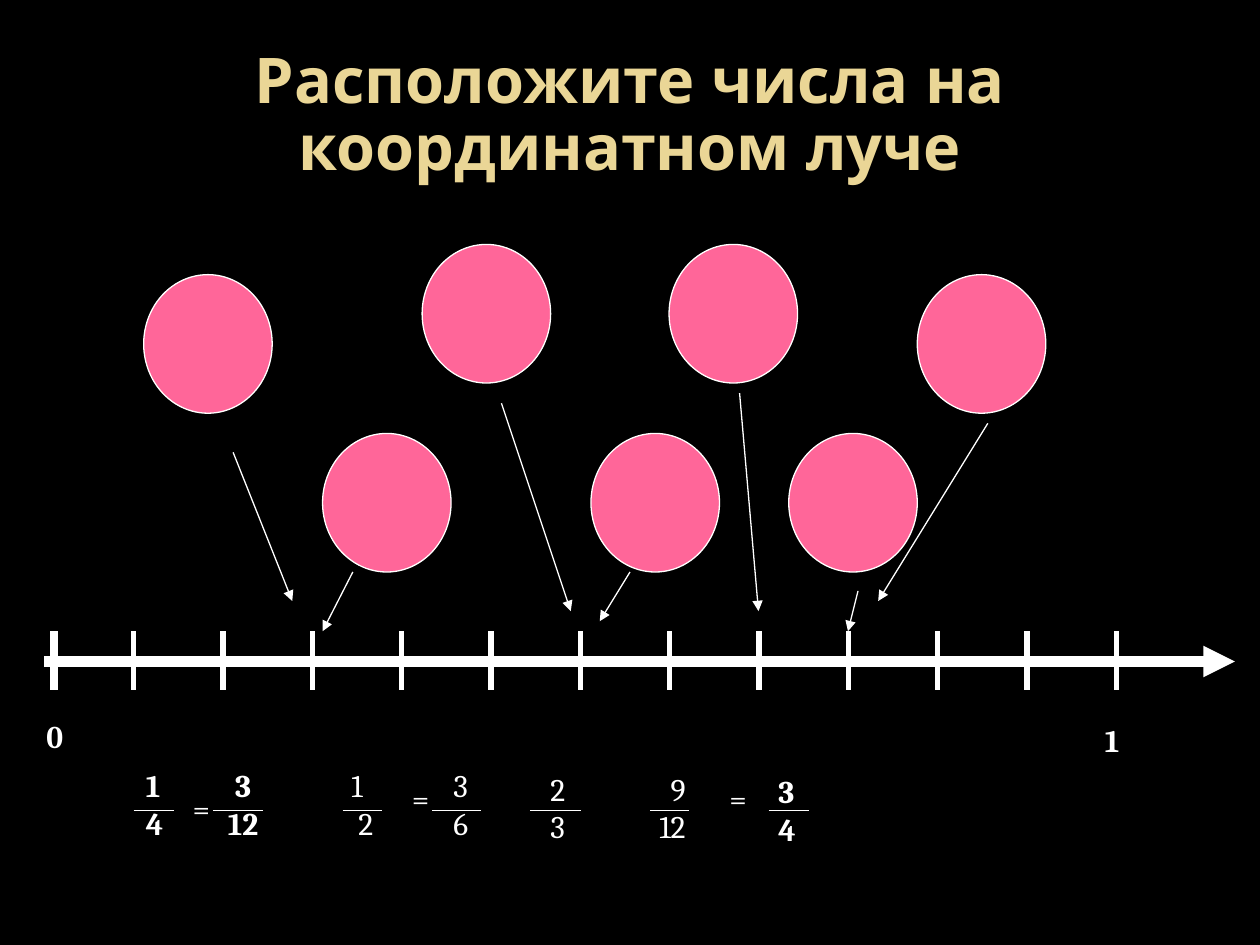
from lxml import etree
from pptx import Presentation
from pptx.dml.color import RGBColor
from pptx.enum.shapes import MSO_CONNECTOR, MSO_SHAPE
from pptx.enum.text import MSO_ANCHOR, MSO_AUTO_SIZE, PP_ALIGN
from pptx.oxml.ns import qn
from pptx.util import Inches, Pt

STRAIGHT = MSO_CONNECTOR.STRAIGHT
OVAL = MSO_SHAPE.OVAL
LEFT, CENTER, RIGHT = PP_ALIGN.LEFT, PP_ALIGN.CENTER, PP_ALIGN.RIGHT

COLORS = {"bg": "000000", "title": "EAD696", "white": "FFFFFF", "pink": "FF6699"}

AXIS_Y = 5.25
TICK_TOP, TICK_BOTTOM = 5.01, 5.48
BAR_Y = 6.43

# Left and top of each circle
CIRCLES = [(1.14, 2.18), (3.35, 1.94), (4.69, 3.44), (2.56, 3.44),
           (7.28, 2.18), (5.31, 1.94), (6.26, 3.44)]

# Start and end of each pointer from a circle to the ray
POINTERS = [(1.85, 3.59, 2.32, 4.77), (2.8, 4.54, 2.56, 5.01),
            (3.98, 3.2, 4.53, 4.85), (5, 4.54, 4.76, 4.93),
            (6.81, 4.69, 6.73, 5.01), (5.87, 3.12, 6.02, 4.85),
            (7.84, 3.36, 6.97, 4.77)]

# Numerator, denominator, left, top, width, bar start, bar end, bold, alignments
FRACTIONS = [
    ("1", "4", 1.06, 6.03, 0.34, 1.06, 1.38, True, (LEFT, LEFT)),
    ("3", "12", 1.69, 6.03, 0.48, 1.69, 2.09, True, (CENTER, CENTER)),
    ("1", "2", 2.69, 6.03, 0.37, 2.72, 3.03, False, (LEFT, RIGHT)),
    ("3", "6", 3.5, 6.03, 0.34, 3.43, 3.82, False, (LEFT, LEFT)),
    ("2", "3", 4.27, 6.06, 0.34, 4.21, 4.61, False, (LEFT, LEFT)),
    ("9", "12", 5.06, 6.06, 0.43 + 0.05, 5.16, 5.47, False, (RIGHT, RIGHT)),
    ("3", "4", 6.08, 6.08, 0.34, 6.1, 6.42, True, (LEFT, LEFT)),
]

EQUALS = [(1.43, 6.21), (3.17, 6.13), (5.69, 6.13)]


def rgb(name):
    return RGBColor.from_string(COLORS[name])


def set_font(r, color, **values):
    for name, value in values.items():
        setattr(r.font, name, value)
    r.font.color.rgb = rgb(color)


def add_title(s, text):
    sp = s.shapes.title
    box = {"left": 0.5, "top": 0.3, "width": 9, "height": 1.25}
    for name, value in box.items():
        setattr(sp, name, Inches(value))
    tf = sp.text_frame
    tf.auto_size = MSO_AUTO_SIZE.NONE
    tf.vertical_anchor = MSO_ANCHOR.MIDDLE
    p = tf.paragraphs[0]
    p.alignment = CENTER
    p.line_spacing = 0.89
    r = p.add_run()
    r.text = text
    set_font(r, "title", name="Open Sans", size=Pt(36), bold=True)


def add_line(s, x1, y1, x2, y2, width=0.75, arrow=False):
    sp = s.shapes.add_connector(STRAIGHT, *map(Inches, (x1, y1, x2, y2)))
    sp.line.color.rgb = rgb("white")
    sp.line.width = Pt(width)
    if arrow:
        etree.SubElement(sp.line._get_or_add_ln(), qn("a:tailEnd"), type="triangle")
    etree.SubElement(sp._element.spPr, qn("a:effectLst"))


def add_circle(s, left, top):
    sp = s.shapes.add_shape(OVAL, *map(Inches, (left, top, 1.02, 1.1)))
    sp.shadow.inherit = False
    sp.fill.solid()
    sp.fill.fore_color.rgb = rgb("pink")
    sp.line.color.rgb = rgb("white")
    sp.line.width = Pt(0.75)


def add_text(s, lines, left, top, width, height=0.4, bold=False, aligns=(LEFT,)):
    sp = s.shapes.add_textbox(*map(Inches, (left, top, width, height)))
    tf = sp.text_frame
    tf.word_wrap = True
    for i, (line, align) in enumerate(zip(lines, aligns)):
        p = tf.add_paragraph() if i else tf.paragraphs[0]
        p.alignment = align
        r = p.add_run()
        r.text = line
        set_font(r, "white", name="Cambria", size=Pt(18), bold=bold)


def add_fraction(s, top_number, bottom_number, left, top, width,
                 bar_start, bar_end, bold, aligns):
    add_text(s, (top_number, bottom_number), left, top, width, 0.7, bold, aligns)
    add_line(s, bar_start, BAR_Y, bar_end, BAR_Y)


def add_ray(s):
    add_line(s, 0.35, AXIS_Y, 9.8, AXIS_Y, 6, arrow=True)
    add_line(s, 0.43, TICK_TOP, 0.43, TICK_BOTTOM, 4.5)
    first, last, count = 1.06, 8.86, 12
    for i in range(count):
        x = first + i * (last - first) / (count - 1)
        add_line(s, x, TICK_TOP, x, TICK_BOTTOM, 3)
    add_text(s, ["0"], 0.27, 5.64, 0.32, bold=True)
    add_text(s, ["1"], 8.67, 5.67, 0.39, bold=True)


def main():
    prs = Presentation()
    prs.slide_width, prs.slide_height = Inches(10), Inches(7.5)
    s = prs.slides.add_slide(prs.slide_layouts[5])
    s.background.fill.solid()
    s.background.fill.fore_color.rgb = rgb("bg")

    add_title(s, "Расположите числа на координатном луче")
    add_ray(s)

    # Circles and their pointers
    for circle in CIRCLES:
        add_circle(s, *circle)
    for pointer in POINTERS:
        add_line(s, *pointer, arrow=True)

    # Fractions below the ray
    for fraction in FRACTIONS:
        add_fraction(s, *fraction)
    for left, top in EQUALS:
        add_text(s, ["="], left, top, 0.35)

    prs.save("out.pptx")


if __name__ == "__main__":
    main()
